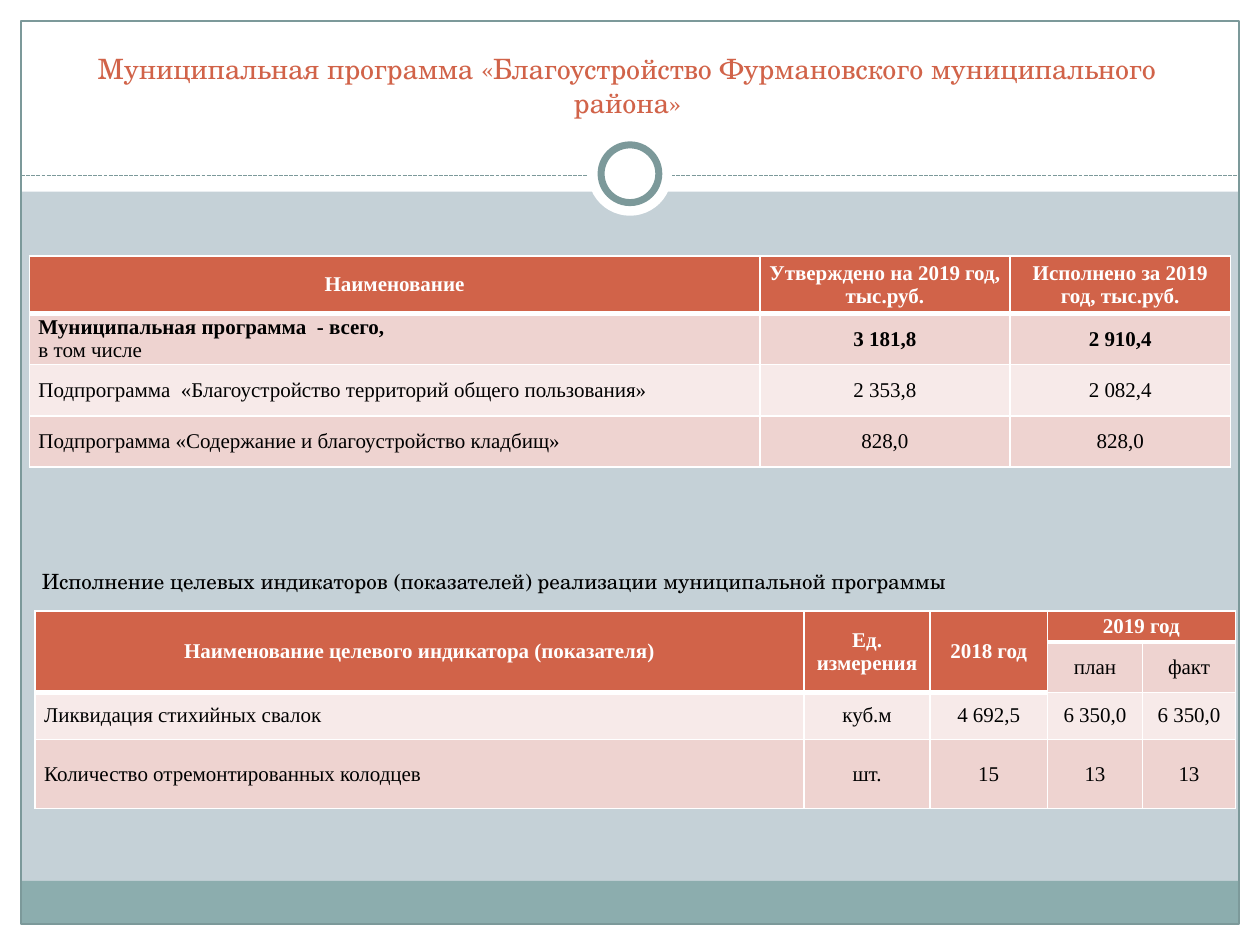
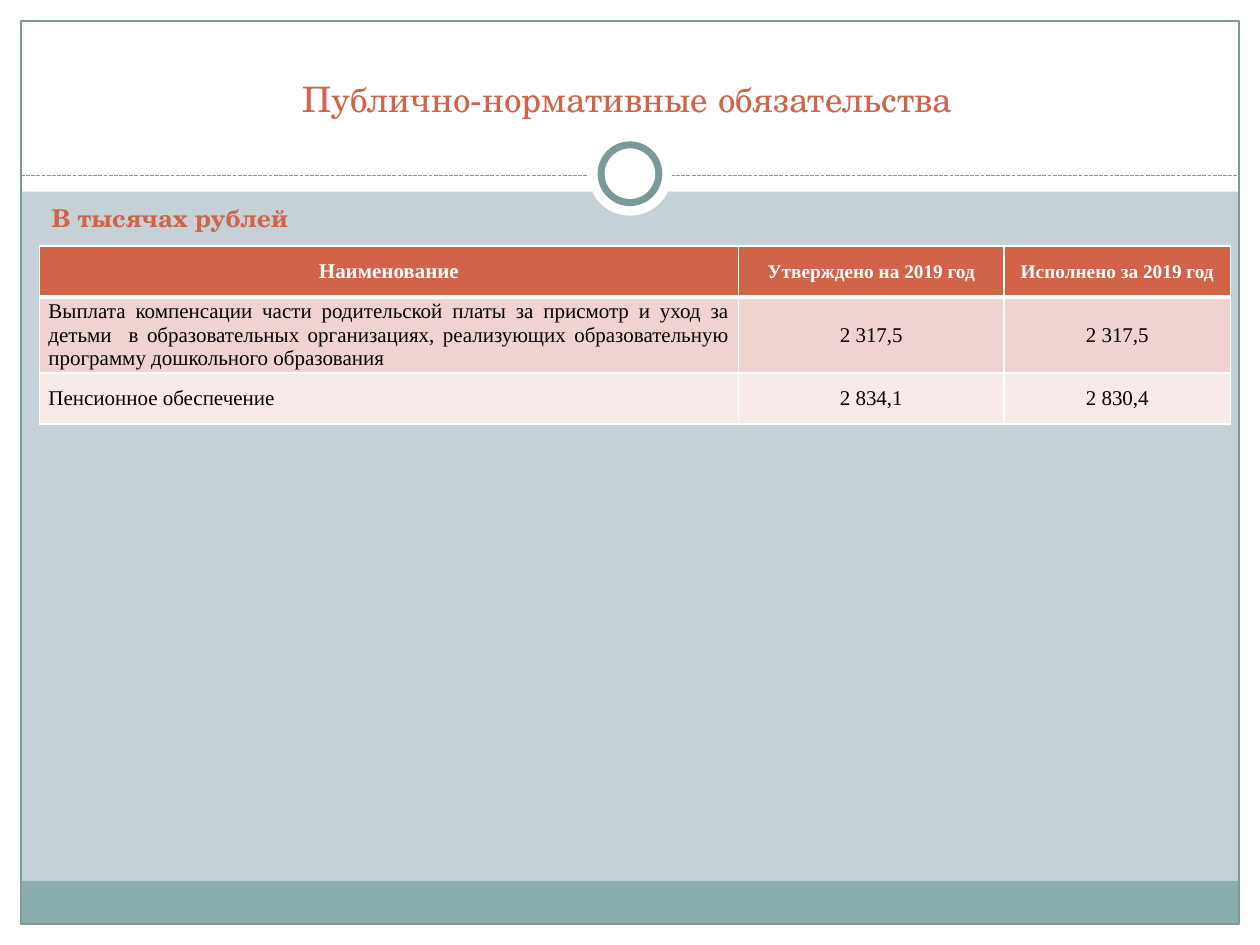
from lxml import etree
from pptx import Presentation, util as u
from pptx.dml.color import RGBColor
from pptx.enum import dml, shapes, text
from pptx.oxml import ns

Pt = u.Pt
RUST = RGBColor(0xD1, 0x63, 0x49)
ROSE = RGBColor(0xEE, 0xD3, 0xD0)
BLUSH = RGBColor(0xF7, 0xEA, 0xE9)
MIST = RGBColor(0xC5, 0xD1, 0xD7)
TEAL = RGBColor(0x8C, 0xAD, 0xAE)
SLATE = RGBColor(0x7C, 0x99, 0x9A)
WHITE = RGBColor(0xFF, 0xFF, 0xFF)
BLACK = RGBColor(0, 0, 0)
SERIF = "Times New Roman"
SCHOOL = "TeX Gyre Schola"
ALIGN = text.PP_ALIGN
ANCHOR = text.MSO_ANCHOR
KIND = shapes.MSO_SHAPE
PAGE = (0, 0, 720, 540)
EDGE = 12


def write(frame, words, font=SERIF, size=12, color=BLACK, lead=False, align=ALIGN.LEFT):
    for num, line in enumerate(words.split("\n")):
        para = frame.add_paragraph() if num else frame.paragraphs[0]
        para.alignment = align
        run = para.add_run()
        run.text = line
        run.font.name = font
        run.font.size = Pt(size)
        run.font.color.rgb = color
        run.font.bold = lead and num == 0


def label(slide, box, words, anchor=ANCHOR.TOP, **form):
    frame = slide.shapes.add_textbox(*map(Pt, box)).text_frame
    frame.word_wrap = True
    frame.vertical_anchor = anchor
    write(frame, words, font=SCHOOL, **form)


def draw(slide, kind, box, fill=None, line=None, width=0.75):
    shape = slide.shapes.add_shape(kind, *map(Pt, box))
    shape.shadow.inherit = False
    if fill is None:
        shape.fill.background()
    else:
        shape.fill.solid()
        shape.fill.fore_color.rgb = fill
    if line is None:
        shape.line.fill.background()
    else:
        shape.line.color.rgb = line
        shape.line.width = Pt(width)


def rule(slide, left, right, top):
    line = slide.shapes.add_connector(shapes.MSO_CONNECTOR.STRAIGHT, *map(Pt, (left, top, right, top)))
    line.line.color.rgb = SLATE
    line.line.width = Pt(0.75)
    line.line.dash_style = dml.MSO_LINE.SQUARE_DOT
    dash = line.line._ln.find(ns.qn("a:prstDash"))
    dash.set("val", "sysDash")
    etree.SubElement(line._element.spPr, ns.qn("a:effectLst"))


def base(slide, box):
    x, y, w, h = box
    slide.background.fill.solid()
    slide.background.fill.fore_color.rgb = MIST
    for band in ((x, y + h - EDGE, w, EDGE), (x, y, w, 109.5),
                 (x, y, EDGE, h), (x + w - EDGE, y, EDGE, h)):
        draw(slide, KIND.RECTANGLE, band, WHITE)
    inner = w - 2 * EDGE
    draw(slide, KIND.RECTANGLE, (x + EDGE, y + h - EDGE - 24.6, inner, 24.6), TEAL)
    draw(slide, KIND.RECTANGLE, (x + EDGE, y + EDGE, inner, h - 2 * EDGE), line=SLATE)
    rule(slide, x + EDGE, x + w - EDGE, y + 100.5)
    for size, line in ((48, None), (33, SLATE)):
        ring = (x + (w - size) / 2, y + 99.3 - size / 2, size, size)
        draw(slide, KIND.OVAL, ring, WHITE, line, 4)


def title(slide, box, words, size):
    label(slide, box, words, ANCHOR.BOTTOM, size=size, color=RUST, align=ALIGN.CENTER)


def edge(cell, **widths):
    props = cell._tc.get_or_add_tcPr()
    for side in "LRTB":
        line = etree.SubElement(props, ns.qn("a:ln" + side), w=str(Pt(widths.get(side, 1))))
        fill = etree.SubElement(line, ns.qn("a:solidFill"))
        etree.SubElement(fill, ns.qn("a:srgbClr"), val=str(WHITE))


def grid(slide, spot, cols, rows, data, heads, spans=(), first=ALIGN.JUSTIFY, small=12):
    box = (*spot, sum(cols), sum(rows))
    table = slide.shapes.add_table(len(rows), len(cols), *map(Pt, box)).table
    table.first_row = table.horz_banding = False
    for col, width in zip(table.columns, cols):
        col.width = Pt(width)
    for row, height in zip(table.rows, rows):
        row.height = Pt(height)
    for start, end in spans:
        table.cell(*start).merge(table.cell(*end))
    heads = heads + [0] * (len(rows) - len(heads))
    for r, line in enumerate(data):
        for c, words in enumerate(line):
            cell = table.cell(r, c)
            head = c < heads[r]
            under = r > 0 and not head and c < heads[r - 1]
            edge(cell, T=3 if under else 1, B=3 if head else 1)
            cell.fill.solid()
            cell.fill.fore_color.rgb = RUST if head else ROSE if r % 2 else BLUSH
            cell.vertical_anchor = ANCHOR.MIDDLE
            cell.margin_left = cell.margin_right = Pt(5.2)
            cell.margin_top = cell.margin_bottom = 0
            if words:
                write(cell.text_frame, words,
                      size=small if head and c else 12,
                      color=WHITE if head else BLACK,
                      lead=head or line[0].startswith("Муниципальная"),
                      align=ALIGN.CENTER if head or c else first)


def works(slide, box):
    x, y = box[:2]
    base(slide, box)
    title(slide, (x + 22.5, y + 21, 672, 50.4),
          "Муниципальная программа «Благоустройство Фурмановского муниципального района»", 16)
    grid(slide, (x + 16.8, y + 146.2), (417.4, 143, 126), (33, 29.2, 29.2, 29.2), (
        ("Наименование", "Утверждено на 2019 год, тыс.руб.", "Исполнено за 2019 год, тыс.руб."),
        ("Муниципальная программа  - всего,\nв том числе", "3 181,8", "2 910,4"),
        ("Подпрограмма  «Благоустройство территорий общего пользования»", "2 353,8", "2 082,4"),
        ("Подпрограмма «Содержание и благоустройство кладбищ»", "828,0", "828,0"),
    ), [3])
    label(slide, (x + 16.8, y + 321.5, 670, 28),
          "Исполнение целевых индикаторов (показателей) реализации муниципальной программы")
    grid(slide, (x + 20, y + 349.2), (439.5, 72, 67, 54.5, 53), (17.6, 26.2, 27, 39.4), (
        ("Наименование целевого индикатора (показателя)", "Ед. измерения", "2018 год", "2019 год", ""),
        ("", "", "", "план", "факт"),
        ("Ликвидация стихийных свалок", "куб.м", "4 692,5", "6 350,0", "6 350,0"),
        ("Количество отремонтированных колодцев", "шт.", "15", "13", "13"),
    ), [5, 3], [((0, c), (1, c)) for c in range(3)] + [((0, 3), (0, 4))], ALIGN.LEFT)


def duties(slide, box):
    x, y = box[:2]
    base(slide, box)
    title(slide, (x + 22.5, y + 33.8, 672, 38.2), "Публично-нормативные обязательства", 20)
    label(slide, (x + 22.5, y + 112.3, 163.5, 33.8), "В тысячах рублей", size=14, color=RUST, lead=True)
    grid(slide, (x + 22.5, y + 140.6), (399.5, 151.8, 129.4), (29.2, 40, 29.2), (
        ("Наименование", "Утверждено на 2019 год", "Исполнено за 2019 год"),
        ("Выплата компенсации части родительской платы за присмотр и уход за детьми  "
         "в образовательных организациях, реализующих образовательную программу "
         "дошкольного образования", "2 317,5", "2 317,5"),
        ("Пенсионное обеспечение", "2 834,1", "2 830,4"),
    ), [3], small=11)


def main():
    deck = Presentation()
    deck.slide_width, deck.slide_height = map(Pt, PAGE[2:])
    for build in (works, duties):
        build(deck.slides.add_slide(deck.slide_layouts[6]), PAGE)
    deck.save("out.pptx")


if __name__ == "__main__":
    main()
